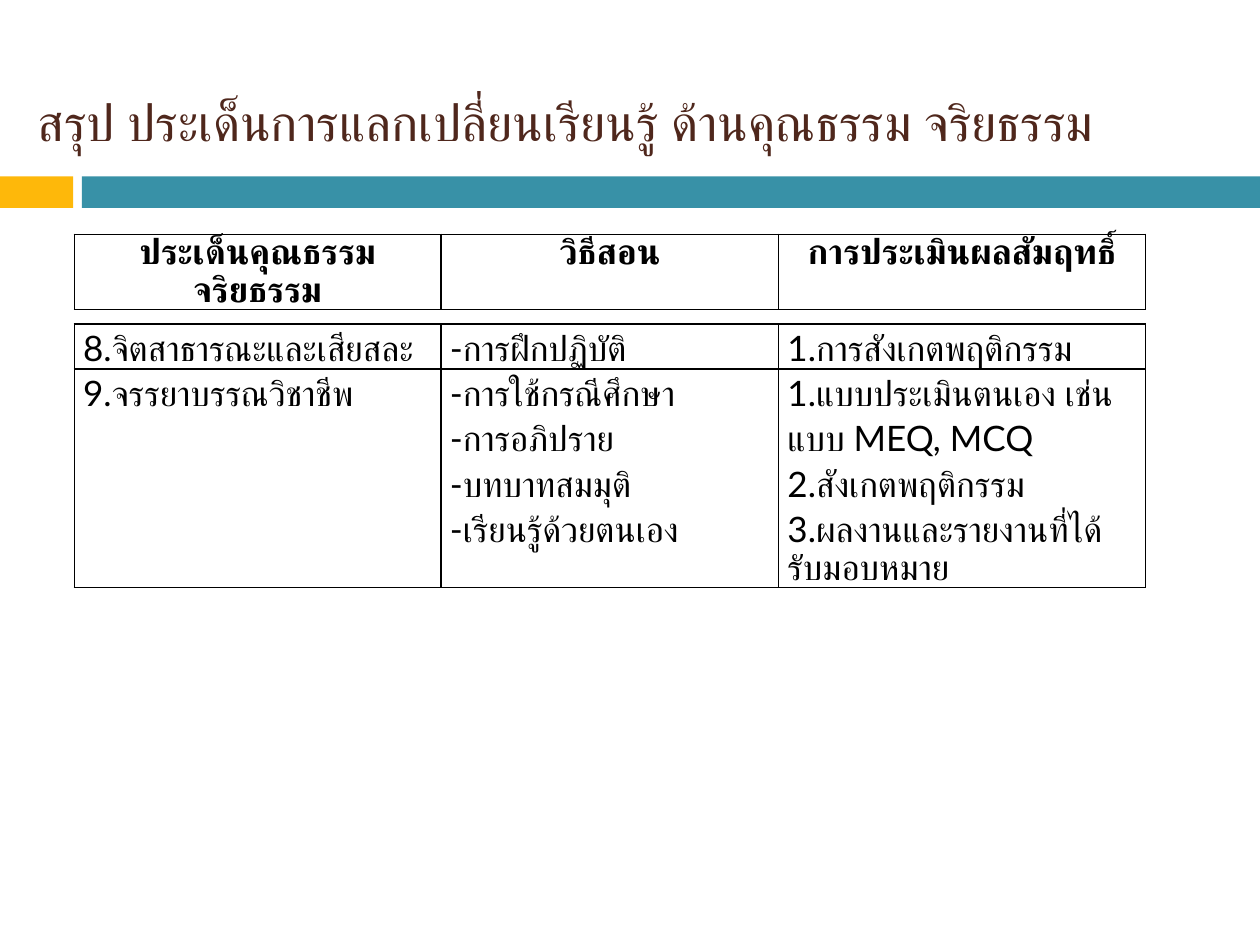
from dataclasses import dataclass

from lxml import etree
from pptx import Presentation
from pptx.dml.color import RGBColor
from pptx.enum.shapes import MSO_SHAPE
from pptx.enum.text import MSO_ANCHOR, PP_ALIGN
from pptx.oxml.ns import qn
from pptx.util import Inches, Pt

RECT = MSO_SHAPE.RECTANGLE
MIDDLE = MSO_ANCHOR.MIDDLE
LEFT, CENTER = PP_ALIGN.LEFT, PP_ALIGN.CENTER


@dataclass(frozen=True)
class Theme:
    font: str = "Lato"
    title_size: int = 29
    table_size: int = 20
    title: str = "4F271C"
    text: str = "000000"
    border: str = "000000"
    accent: str = "FEB80A"
    band: str = "3891A7"


THEME = Theme()
COLUMN_WIDTHS = (2.91, 2.68, 2.91)


def add_borders(cell):
    """Draw a one-point line on all four sides; lines must precede the fill."""
    tc_pr = cell._tc.get_or_add_tcPr()
    for i, side in enumerate(("lnL", "lnR", "lnT", "lnB")):
        ln = etree.Element(qn(f"a:{side}"), w=str(Pt(1)))
        fill = etree.SubElement(ln, qn("a:solidFill"))
        etree.SubElement(fill, qn("a:srgbClr"), val=THEME.border)
        tc_pr.insert(i, ln)


def add_grid(slide, top, row_heights, rows, align, bold):
    """Add a bordered table; each cell is a list of paragraphs."""
    frame = slide.shapes.add_table(
        len(rows), len(COLUMN_WIDTHS), Inches(0.59), Inches(top),
        Inches(sum(COLUMN_WIDTHS)), Inches(sum(row_heights)))
    table = frame.table
    table.first_row = bold
    table.horz_banding = False
    for column, width in zip(table.columns, COLUMN_WIDTHS):
        column.width = Inches(width)
    for row, height, contents in zip(table.rows, row_heights, rows):
        row.height = Inches(height)
        for cell, lines in zip(row.cells, contents):
            cell.margin_left = cell.margin_right = Inches(0.07)
            cell.margin_top = cell.margin_bottom = 0
            cell.fill.background()
            add_borders(cell)
            cell.text_frame.text = "\n".join(lines)
            for p in cell.text_frame.paragraphs:
                p.alignment = align
                p.line_spacing = 1.07
                p.font.name = THEME.font
                p.font.size = Pt(THEME.table_size)
                p.font.bold = bold
                p.font.color.rgb = RGBColor.from_string(THEME.text)


prs = Presentation()
prs.slide_width, prs.slide_height = Inches(10), Inches(7.5)
s = prs.slides.add_slide(prs.slide_layouts[6])

# Divider under the title
for left, width, color in ((0, 0.58, THEME.accent), (0.65, 9.35, THEME.band)):
    sp = s.shapes.add_shape(RECT, Inches(left), Inches(1.4), Inches(width), Inches(0.25))
    sp.shadow.inherit = False
    sp.fill.solid()
    sp.fill.fore_color.rgb = RGBColor.from_string(color)
    sp.line.fill.background()

# Topics, teaching methods and assessment
add_grid(s, 2.57, (0.36, 1.73), [
    [["8.จิตสาธารณะและเสียสละ"], ["-การฝึกปฏิบัติ"], ["1.การสังเกตพฤติกรรม"]],
    [["9.จรรยาบรรณวิชาชีพ"],
     ["-การใช้กรณีศึกษา", "-การอภิปราย", "-บทบาทสมมุติ", "-เรียนรู้ด้วยตนเอง"],
     ["1.แบบประเมินตนเอง เช่น แบบ MEQ, MCQ", "2.สังเกตพฤติกรรม",
      "3.ผลงานและรายงานที่ได้รับมอบหมาย"]],
], LEFT, False)

# Column headings
add_grid(s, 1.86, (0.59,), [
    [["ประเด็นคุณธรรมจริยธรรม"], ["วิธีสอน"], ["การประเมินผลสัมฤทธิ์"]],
], CENTER, True)

# Title
sp = s.shapes.add_textbox(Inches(0.2), Inches(0.6), Inches(9.61), Inches(0.72))
tf = sp.text_frame
tf.word_wrap = True
tf.vertical_anchor = MIDDLE
p = tf.paragraphs[0]
p.text = "สรุป ประเด็นการแลกเปลี่ยนเรียนรู้ ด้านคุณธรรม จริยธรรม"
p.font.name = THEME.font
p.font.size = Pt(THEME.title_size)
p.font.color.rgb = RGBColor.from_string(THEME.title)

prs.save("out.pptx")
